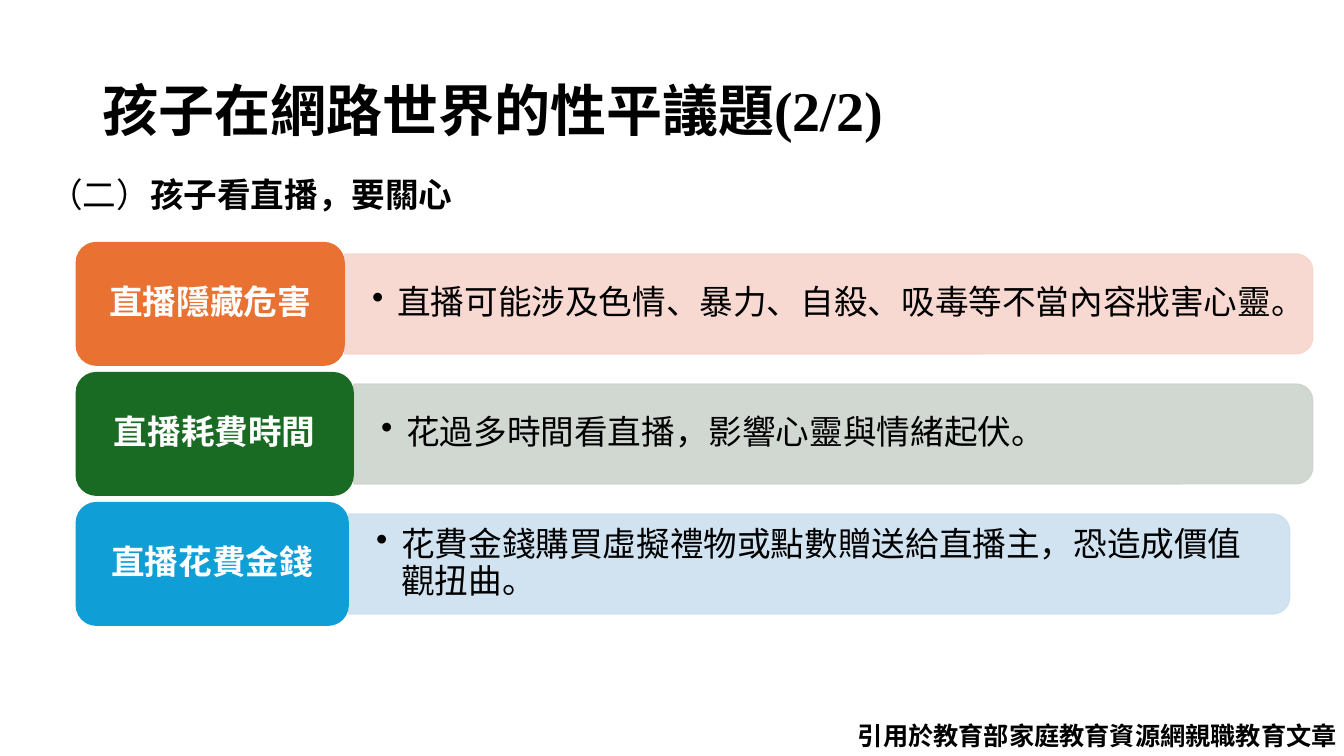
import pptx
import pptx.dml.color
import pptx.enum.shapes
import pptx.enum.text
import pptx.oxml.ns
import pptx.util
from lxml import etree

Inches = pptx.util.Inches
Pt = pptx.util.Pt
SHAPES = pptx.enum.shapes.MSO_SHAPE
ALIGN = pptx.enum.text.PP_ALIGN
MIDDLE = pptx.enum.text.MSO_ANCHOR.MIDDLE
CJK_FONT = "Noto Sans CJK SC"

# Label, label width, label colour, detail, panel width, panel colour
TOPICS = [
    ("直播隱藏危害", 2.67, "E97132",
     "直播可能涉及色情、暴力、自殺、吸毒等不當內容戕害心靈。", 9.6, "F7D5CE"),
    ("直播耗費時間", 2.76, "196B24",
     "花過多時間看直播，影響心靈與情緒起伏。", 9.51, "CCD4CD"),
    ("直播花費金錢", 2.71, "0F9ED5",
     "花費金錢購買虛擬禮物或點數贈送給直播主，恐造成價值觀扭曲。", 9.33, "CCDFEF"),
]


def color(hex_value):
    return pptx.dml.color.RGBColor.from_string(hex_value)


def format_run(run, size, hex_value="000000", bold=False, latin=CJK_FONT):
    run.font.size = Pt(size)
    run.font.bold = bold
    run.font.name = latin
    run.font.color.rgb = color(hex_value)
    east_asian = etree.SubElement(run.font._element, pptx.oxml.ns.qn("a:ea"))
    east_asian.set("typeface", CJK_FONT)


def set_opacity(color_format_parent, percent):
    for fill_color in color_format_parent.iter(pptx.oxml.ns.qn("a:srgbClr")):
        alpha = etree.SubElement(fill_color, pptx.oxml.ns.qn("a:alpha"))
        alpha.set("val", str(percent * 1000))


def add_bullet(paragraph, indent):
    properties = paragraph._p.get_or_add_pPr()
    properties.set("marL", str(Inches(indent)))
    properties.set("indent", str(-Inches(indent)))
    bullet = etree.SubElement(properties, pptx.oxml.ns.qn("a:buChar"))
    bullet.set("char", "•")


def add_text_box(slide, left, top, width, height):
    box = slide.shapes.add_textbox(
        Inches(left), Inches(top), Inches(width), Inches(height))
    box.text_frame.word_wrap = True
    return box.text_frame


def add_title(slide, left, top, width, height):
    title = slide.shapes.title
    title.left, title.top = Inches(left), Inches(top)
    title.width, title.height = Inches(width), Inches(height)
    frame = title.text_frame
    frame.text = "孩子在網路世界的性平議題(2/2)"
    frame.auto_size = pptx.enum.text.MSO_AUTO_SIZE.NONE
    frame.vertical_anchor = MIDDLE
    paragraph = frame.paragraphs[0]
    paragraph.alignment = ALIGN.LEFT
    paragraph.line_spacing = 0.9
    format_run(paragraph.runs[0], 40, bold=True, latin="Times New Roman")


def add_subtitle(slide, left, top, width, height):
    paragraph = add_text_box(slide, left, top, width, height).paragraphs[0]
    paragraph.line_spacing = Pt(30)
    for text, bold in (("（二）", False), ("孩子看直播，要關心", True)):
        run = paragraph.add_run()
        run.text = text
        format_run(run, 24, bold=bold)


def add_panel(slide, left, top, width, height, text, hex_value):
    # The shape is rounded on top, so a quarter turn rounds its right end
    panel = slide.shapes.add_shape(
        SHAPES.ROUND_2_SAME_RECTANGLE,
        Inches(left + (width - height) / 2), Inches(top - (width - height) / 2),
        Inches(height), Inches(width))
    panel.rotation = 90
    panel.shadow.inherit = False
    panel.fill.solid()
    panel.fill.fore_color.rgb = color(hex_value)
    panel.line.color.rgb = color(hex_value)
    panel.line.width = Pt(1)
    set_opacity(panel._element.spPr, 90)

    # Upright text over the turned shape
    margin = 0.05
    frame = add_text_box(slide, left, top + margin, width - margin, height - 2 * margin)
    frame.text = text
    frame.vertical_anchor = MIDDLE
    frame.margin_left = frame.margin_right = Inches(0.27)
    frame.margin_top = frame.margin_bottom = Inches(0.14)
    paragraph = frame.paragraphs[0]
    paragraph.line_spacing = 0.9
    add_bullet(paragraph, 0.25)
    format_run(paragraph.runs[0], 24)


def add_label(slide, left, top, width, height, text, hex_value):
    label = slide.shapes.add_shape(
        SHAPES.ROUNDED_RECTANGLE,
        Inches(left), Inches(top), Inches(width), Inches(height))
    label.shadow.inherit = False
    label.fill.solid()
    label.fill.fore_color.rgb = color(hex_value)
    label.line.fill.background()
    frame = label.text_frame
    frame.text = text
    frame.word_wrap = True
    frame.vertical_anchor = MIDDLE
    paragraph = frame.paragraphs[0]
    paragraph.alignment = ALIGN.CENTER
    paragraph.line_spacing = 0.9
    format_run(paragraph.runs[0], 24, "FFFFFF", bold=True)


def add_topics(slide, left, top, row_height, pitch):
    panel_height = 0.99
    inset = (row_height - panel_height) / 2
    for index, topic in enumerate(TOPICS):
        label, label_width, label_color, detail, panel_width, panel_color = topic
        row_top = top + index * pitch
        add_panel(slide, left + label_width, row_top + inset,
                  panel_width, panel_height, detail, panel_color)
        add_label(slide, left, row_top, label_width, row_height, label, label_color)


def add_source_note(slide, left, top, width, height):
    frame = add_text_box(slide, left, top, width, height)
    frame.text = "引用於教育部家庭教育資源網親職教育文章"
    frame.margin_right = 0
    format_run(frame.paragraphs[0].runs[0], 18, bold=True)


def main():
    presentation = pptx.Presentation()
    presentation.slide_width = Inches(13.33)
    presentation.slide_height = Inches(7.5)
    slide = presentation.slides.add_slide(presentation.slide_layouts[5])
    add_title(slide, 0.92, 0.4, 11.5, 1.45)
    add_subtitle(slide, 0.39, 1.66, 12.56, 0.5)
    add_topics(slide, 0.75, 2.4, 1.23, 1.29)
    add_source_note(slide, 8.41, 7.1, 4.92, 0.4)
    presentation.save("out.pptx")


if __name__ == "__main__":
    main()
